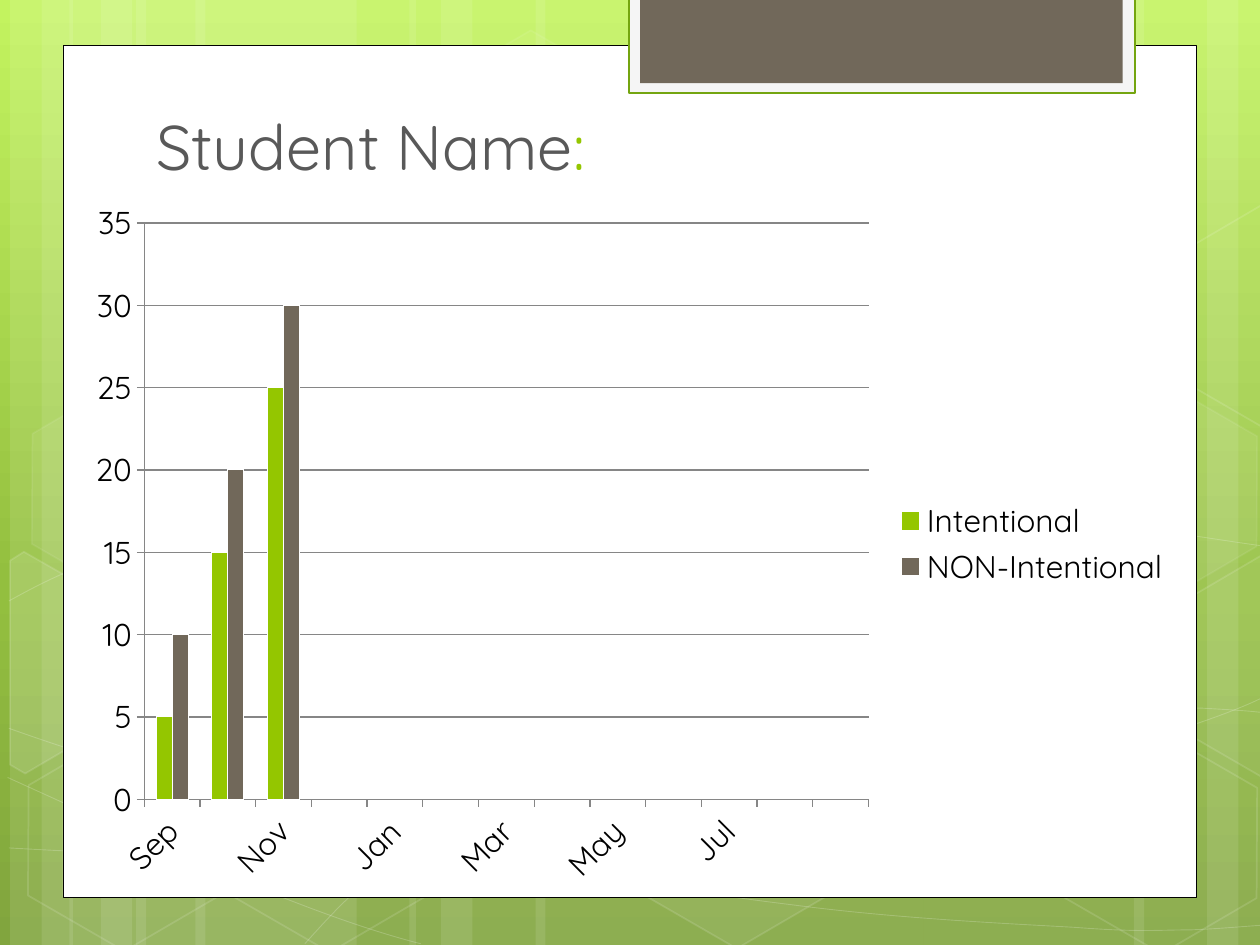
from copy import deepcopy

from lxml.etree import SubElement
from pptx import Presentation
from pptx.chart.data import CategoryChartData
from pptx.dml.color import RGBColor
from pptx.enum.chart import XL_CHART_TYPE as CHART, XL_LEGEND_POSITION as LEGEND, XL_TICK_MARK as TICK
from pptx.enum.shapes import MSO_SHAPE as SHAPE
from pptx.enum.text import MSO_ANCHOR as ANCHOR, PP_ALIGN as ALIGN
from pptx.oxml.ns import qn
from pptx.util import Inches, Pt

FONT = "Quicksand"
WHITE, GREEN, BROWN, GRAY = "FFFFFF", "94C600", "71685A", "868686"

STREAKS = [(1.08, 1.75), (0.08, 0.5), (0.33, 0.83), (1.55, 1.75), (0.55, 0.5), (0.8, 0.83),
           (7.33, 1.75), (9.58, 0.5), (9, 0.83), (4.25, 3.08), (3.25, 0.5), (3.5, 0.83)]

# Each curve: a start point, then three points per Bezier segment
CURVES = [
    [(0.07, 6.73), (0.61, 6.76), (1.15, 6.79), (1.9, 6.78), (2.65, 6.77), (3.58, 6.75), (4.58, 6.65),
     (5.58, 6.55), (7, 6.36), (7.92, 6.17), (8.83, 5.98), (9.77, 5.68), (10.07, 5.51)],
    [(0.07, 4.77), (0.36, 4.61), (0.65, 4.46), (1.21, 4.31), (1.78, 4.16), (2.59, 3.94), (3.47, 3.87),
     (4.36, 3.8), (5.44, 3.79), (6.54, 3.87), (7.64, 3.95), (9.47, 4.26), (10.07, 4.34)],
    [(0.06, 6.17), (1.27, 6.72), (2.47, 7.27), (3.34, 7.49)],
    [(0.07, 5.78), (0.38, 5.89), (0.7, 6), (1.28, 6.16), (1.86, 6.31), (2.73, 6.56), (3.57, 6.73),
     (4.4, 6.9), (5.45, 7.08), (6.28, 7.18), (7.11, 7.29), (8, 7.33), (8.53, 7.36),
     (9.05, 7.4), (9.19, 7.38), (9.45, 7.38), (9.71, 7.37), (9.89, 7.35), (10.07, 7.34)],
    [(2.42, 7.49), (2.6, 7.29), (2.78, 7.09), (3.02, 6.91), (3.26, 6.73), (3.6, 6.53), (3.88, 6.39),
     (4.16, 6.25), (4.33, 6.19), (4.7, 6.09), (5.06, 5.99), (5.73, 5.85), (6.08, 5.78),
     (6.44, 5.71), (6.49, 5.71), (6.8, 5.69), (7.11, 5.66), (7.6, 5.63), (7.94, 5.62),
     (8.29, 5.61), (8.86, 5.62), (8.86, 5.62), (8.86, 5.62), (9.53, 5.62), (9.53, 5.62),
     (9.71, 5.63), (9.88, 5.64), (9.97, 5.65), (10.06, 5.66), (10.03, 5.65), (10.06, 5.66)],
]

# Left, top, fill opacity (None for no fill), line opacity
HEXAGONS = [(3.34, 0.36, 4, 8), (4.97, 5.89, 6, 12), (0.11, 5.91, None, 12), (0.14, 3.12, 7, 8),
            (1.74, 5.92, None, 12), (7.53, 4.53, 10, 12), (8.34, 5.93, None, 12), (8.34, 3.14, 7, 8)]

# Hexagons cut by the slide's edge: points, fill opacity
CUT_HEXAGONS = [
    ([(0.08, 4.45), (0.19, 4.38), (0.96, 4.82), (0.95, 5.7), (0.2, 6.14), (0.08, 6.07)], 10),
    ([(9.26, 4.85), (10.01, 4.41), (10.09, 4.46), (10.09, 6.13), (10.02, 6.17), (9.26, 5.73)], 4),
    ([(9.26, 2.07), (10.01, 1.63), (10.1, 1.68), (10.09, 3.35), (10.02, 3.39), (9.26, 2.95)], None),
]

MONTHS = ["Sep", "Oct", "Nov", "Dec", "Jan", "Feb", "Mar", "Apr", "May", "Jun", "Jul", "Aug", ""]
SERIES = [("Intentional", [5, 15, 25], GREEN), ("NON-Intentional", [10, 20, 30], BROWN)]


def rgb(color):
    return RGBColor.from_string(color)


def set_alpha(fill, color, alpha):
    """Make a solid fill with an opacity in percent."""
    fill.solid()
    fill.fore_color.rgb = rgb(color)
    if alpha < 100:
        clr = fill._xPr.find(".//" + qn("a:srgbClr"))
        SubElement(clr, qn("a:alpha")).set("val", str(alpha * 1000))


def add_text(p, text, size=36, color="000000", font=FONT):
    r = p.add_run()
    r.text = text
    r.font.size, r.font.name = Pt(size), font
    r.font.color.rgb = rgb(color)


class Deck:
    def __init__(self, prs):
        self.s = prs.slides.add_slide(prs.slide_layouts[5])

    def background(self, stops):
        fill = self.s.background.fill
        fill.gradient()
        fill.gradient_angle = 270
        gs_list = self.s._element.find(".//" + qn("a:gsLst"))
        gs_list.append(deepcopy(gs_list[0]))
        for stop, (pos, color) in zip(fill.gradient_stops, stops):
            stop.position, stop.color.rgb = pos, rgb(color)

    def paint(self, sp, fill=None, alpha=100, line=None, width=1, line_alpha=100):
        sp.shadow.inherit = False
        if fill and alpha:
            set_alpha(sp.fill, fill, alpha)
        else:
            sp.fill.background()
        if line:
            sp.line.width = Pt(width)
            set_alpha(sp.line.fill, line, line_alpha)
        else:
            sp.line.fill.background()
        return sp

    def shape(self, kind, x, y, w, h, **style):
        sp = self.s.shapes.add_shape(kind, Inches(x), Inches(y), Inches(w), Inches(h))
        return self.paint(sp, **style)

    def hexagon(self, x, y, **style):
        sp = self.shape(SHAPE.HEXAGON, x, y, 1.75, 1.52, **style)
        sp.adjustments[0] = 0.285
        sp.rotation = 30

    def freeform(self, points, close, **style):
        pts = [(Inches(x), Inches(y)) for x, y in points]
        fb = self.s.shapes.build_freeform(*pts[0])
        fb.add_line_segments(pts[1:], close=close)
        return self.paint(fb.convert_to_shape(), **style)

    def curve(self, points, **style):
        """Draw a freeform and gather each three of its points into a Bezier segment."""
        sp = self.freeform(points, False, **style)
        lines = list(sp._element.iter(qn("a:lnTo")))
        outline = lines[0].getparent()
        for i in range(0, len(lines), 3):
            segment = SubElement(outline, qn("a:cubicBezTo"))
            for line in lines[i:i + 3]:
                segment.append(line[0])
                outline.remove(line)

    def title(self, x, y, w, h, runs):
        sp = self.s.shapes.title
        sp.left, sp.top, sp.width, sp.height = Inches(x), Inches(y), Inches(w), Inches(h)
        # Bring the title in front of the backdrop
        self.s.shapes._spTree.append(sp._element)
        tf = sp.text_frame
        tf.vertical_anchor = ANCHOR.BOTTOM
        p = tf.paragraphs[0]
        p.alignment = ALIGN.LEFT
        for text, color in runs:
            add_text(p, text, color=color)

    def column_chart(self, x, y, w, h, cats, series):
        data = CategoryChartData()
        data.categories = cats
        for name, values, _ in series:
            data.add_series(name, values + [None] * (len(cats) - len(values)))
        chart = self.s.shapes.add_chart(CHART.COLUMN_CLUSTERED, Inches(x), Inches(y),
                                        Inches(w), Inches(h), data).chart
        chart.has_title = False
        chart.font.size, chart.font.name = Pt(18), FONT
        chart.font.color.rgb = rgb("000000")
        chart.has_legend = True
        chart.legend.position = LEGEND.RIGHT
        chart.legend.include_in_layout = False
        for axis in (chart.category_axis, chart.value_axis):
            axis.major_tick_mark = TICK.OUTSIDE
            axis.format.line.color.rgb = rgb(GRAY)
        chart.value_axis.major_gridlines.format.line.color.rgb = rgb(GRAY)
        plot = chart.plots[0]
        plot.gap_width, plot.overlap, plot.vary_by_categories = 150, 0, False
        for ser, (_, _, color) in zip(plot.series, series):
            ser.format.fill.solid()
            ser.format.fill.fore_color.rgb = rgb(color)
            ser.format.line.color.rgb = rgb(WHITE)


def main():
    prs = Presentation()
    prs.slide_width, prs.slide_height = Inches(10), Inches(7.5)
    deck = Deck(prs)
    deck.background([(0, "C3F35F"), (0.62, "93BF3F"), (1, "81A53E")])
    for x, w in STREAKS:
        deck.shape(SHAPE.RECTANGLE, x, 0, w, 7.5, fill=WHITE, alpha=10)
    for points in CURVES:
        deck.curve(points, line=WHITE, width=0.5, line_alpha=20)
    for x, y, alpha, line_alpha in HEXAGONS:
        deck.hexagon(x, y, fill=WHITE, alpha=alpha, line=WHITE, line_alpha=line_alpha)
    for points, alpha in CUT_HEXAGONS:
        deck.freeform(points, True, fill=WHITE, alpha=alpha, line=WHITE, line_alpha=12)

    deck.shape(SHAPE.RECTANGLE, 0.5, 0.36, 9, 6.76, fill=WHITE, line="000000", width=0.5)
    deck.shape(SHAPE.RECTANGLE, 4.99, -0.02, 4.02, 0.76, fill="F5F5F5", line="74A510", width=1.25)
    deck.shape(SHAPE.RECTANGLE, 5.08, -0.02, 3.83, 0.68, fill=BROWN)
    deck.title(1.14, 0.75, 7.68, 0.75, [("Student Name", "595959"), (":", GREEN)])
    deck.column_chart(0.58, 1.5, 8.81, 5.63, MONTHS, SERIES)
    prs.save("out.pptx")


if __name__ == "__main__":
    main()
